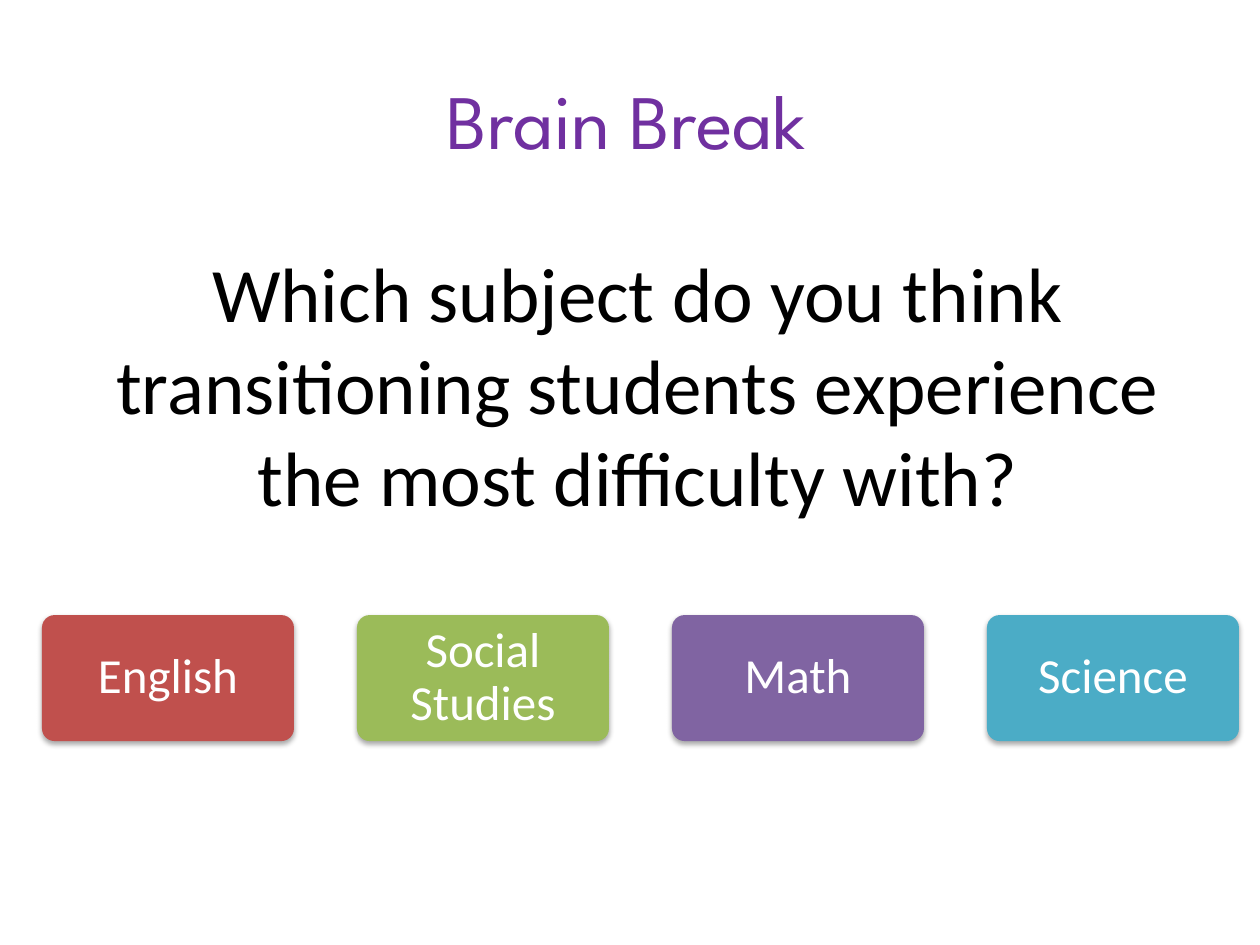
import pptx
import pptx.dml.color
import pptx.enum.shapes
import pptx.enum.text
import pptx.oxml.ns
import pptx.util
from lxml import etree

Pt = pptx.util.Pt
RGBColor = pptx.dml.color.RGBColor
qn = pptx.oxml.ns.qn

BLACK = RGBColor(0x00, 0x00, 0x00)
WHITE = RGBColor(0xFF, 0xFF, 0xFF)
VIOLET = RGBColor(0x70, 0x30, 0xA0)
RED = RGBColor(0xC0, 0x50, 0x4D)
GREEN = RGBColor(0x9B, 0xBB, 0x59)
PURPLE = RGBColor(0x80, 0x64, 0xA2)
TEAL = RGBColor(0x4B, 0xAC, 0xC6)


def write_text(tf, text, font="Calibri", size=44, color=BLACK, spacing=None,
               anchor=pptx.enum.text.MSO_ANCHOR.MIDDLE):
    """Fill a text frame with one centred paragraph."""
    tf.word_wrap = True
    tf.vertical_anchor = anchor
    p = tf.paragraphs[0]
    p.alignment = pptx.enum.text.PP_ALIGN.CENTER
    if spacing:
        p.line_spacing = spacing
    r = p.add_run()
    r.text = text
    r.font.name = font
    r.font.size = Pt(size)
    r.font.color.rgb = color


def add_soft_shadow(sp):
    """Give a shape a faint shadow that falls straight down."""
    sp.shadow.inherit = False
    effects = sp._element.spPr.find(qn("a:effectLst"))
    shadow = etree.SubElement(effects, qn("a:outerShdw"), blurRad=str(Pt(3.1)),
                              dist=str(Pt(1.8)), dir="5400000", rotWithShape="0")
    color = etree.SubElement(shadow, qn("a:srgbClr"), val="000000")
    etree.SubElement(color, qn("a:alpha"), val="35000")


class SlideBuilder:
    def __init__(self, slide):
        self.s = slide
        self.heading_font = "League Spartan"
        self.card_size = 28

    def title(self, text, x, y, w, h):
        sp = self.s.shapes.title
        sp.left, sp.top, sp.width, sp.height = Pt(x), Pt(y), Pt(w), Pt(h)
        write_text(sp.text_frame, text)

    def heading(self, text, x, y, w, h):
        sp = self.s.shapes.add_textbox(Pt(x), Pt(y), Pt(w), Pt(h))
        write_text(sp.text_frame, text, font=self.heading_font, color=VIOLET,
                   anchor=pptx.enum.text.MSO_ANCHOR.TOP)

    def card(self, text, fill, x, y, w, h):
        sp = self.s.shapes.add_shape(
            pptx.enum.shapes.MSO_SHAPE.ROUNDED_RECTANGLE, Pt(x), Pt(y), Pt(w), Pt(h))
        sp.adjustments[0] = 0.1
        sp.fill.solid()
        sp.fill.fore_color.rgb = fill
        sp.line.fill.background()
        add_soft_shadow(sp)
        tf = sp.text_frame
        tf.margin_left = tf.margin_right = Pt(6)
        tf.margin_top = tf.margin_bottom = Pt(5)
        write_text(tf, text, size=self.card_size, color=WHITE, spacing=0.9)


def main():
    prs = pptx.Presentation()
    prs.slide_width, prs.slide_height = Pt(720), Pt(540)
    title_only = prs.slide_layouts[5]
    builder = SlideBuilder(prs.slides.add_slide(title_only))

    # Question
    builder.title("Which subject do you think transitioning students experience "
                  "the most difficulty with?", 54, 126, 621, 186.5)

    # Row of answers
    answers = [("English", RED), ("Social Studies", GREEN),
               ("Math", PURPLE), ("Science", TEAL)]
    width, gap = 144, 36
    for i, (subject, color) in enumerate(answers):
        builder.card(subject, color, 24 + i * (width + gap), 351.5, width, 72)

    # Heading
    builder.heading("Brain Break", 180, 38, 356, 60.5)

    prs.save("out.pptx")


if __name__ == "__main__":
    main()
